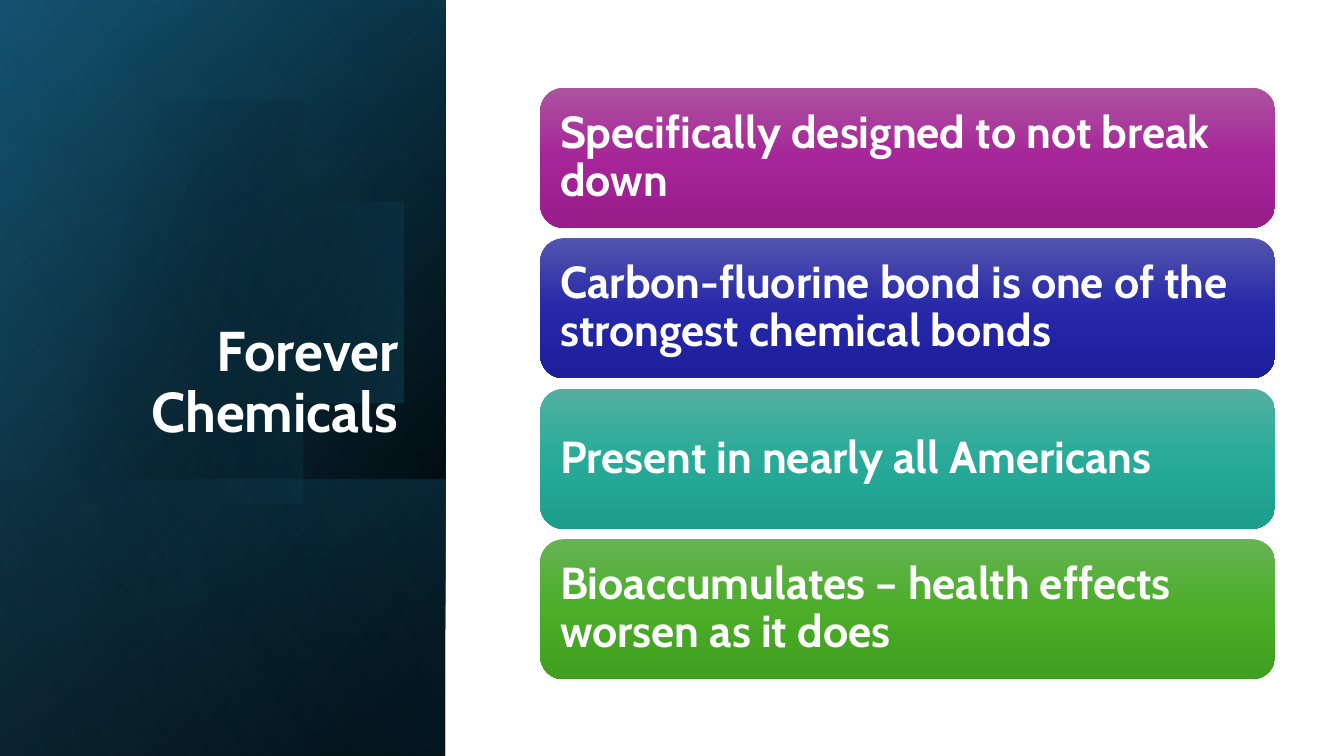
from math import acos, cos, pi, sin

from lxml.etree import SubElement
from pptx import Presentation
from pptx.dml.color import RGBColor
from pptx.enum.shapes import MSO_SHAPE
from pptx.enum.text import MSO_ANCHOR, MSO_AUTO_SIZE, PP_ALIGN
from pptx.oxml.ns import qn
from pptx.util import Inches, Pt

WIDTH, HEIGHT = Inches(13.33), Inches(7.5)
PANEL_COLS = 33.15
LOWER_ROW = 63.47

COLORS = {
    "white": "FFFFFF",
    "black": "000000",
    "navy": "104862",
    "teal": "156082",
    "sky": "46B1E1",
}

# Panel layers: top row, gradient stops (position, colour, opacity), angle
BACKDROP = [
    (0, [(8, "black", 100), (100, "navy", 100)], 50),
    (0, [(0, "black", 0), (99, "teal", 46)], 30),
    (LOWER_ROW, [(2, "teal", 29), (100, "black", 30)], 130),
]
DISC = [(29, "black", 0), (100, "teal", 43)]
SHEEN = (0, [(0, "black", 0), (99, "sky", 11)], 120)

FACTS = [
    ("Specifically designed to not break down", ("AC53A0", "A62598", "991C8B")),
    ("Carbon-fluorine bond is one of the strongest chemical bonds",
     ("5354AE", "2628A8", "1D1E9B")),
    ("Present in nearly all Americans", ("53B0A1", "27AB98", "1D9D8B")),
    ("Bioaccumulates – health effects worsen as it does",
     ("66B354", "4BAD28", "409F1E")),
]


def cols(count):
    """Length of a number of columns, 100 to the slide width."""
    return round(WIDTH * count / 100)


def rows(count):
    """Length of a number of rows, 100 to the slide height."""
    return round(HEIGHT * count / 100)


def apply_format(target, **values):
    for name, value in values.items():
        setattr(target, name, value)


def paint(shape, stops, angle):
    """Fill with a gradient running clockwise from left to right, no outline."""
    shape.shadow.inherit = False
    shape.line.fill.background()
    shape.fill.gradient()
    shape.fill.gradient_angle = 360 - angle
    stop_list = shape._element.spPr.find(qn("a:gradFill")).find(qn("a:gsLst"))
    for default_stop in list(stop_list):
        stop_list.remove(default_stop)
    for position, color, opacity in stops:
        stop = SubElement(stop_list, qn("a:gs"), pos=str(position * 1000))
        tint = SubElement(stop, qn("a:srgbClr"), val=COLORS.get(color, color))
        if opacity < 100:
            SubElement(tint, qn("a:alpha"), val=str(opacity * 1000))


def add_panel_layer(slide, top_row, stops, angle):
    """Add a mirrored quarter-turned rectangle from top_row to the slide's foot."""
    across, down = cols(PANEL_COLS), rows(100 - top_row)
    middle = rows(top_row) + down // 2
    layer = slide.shapes.add_shape(
        MSO_SHAPE.RECTANGLE, (across - down) // 2, middle - across // 2, down, across)
    layer.rotation = 90
    layer._element.spPr.find(qn("a:xfrm")).set("flipH", "1")
    paint(layer, stops, angle)


def add_disc(slide):
    """Add the circle that the left edge of the panel cuts off."""
    center_x, center_y, radius, cut = 1.44, 3.38, 2.28, -0.15
    reach = pi - acos((center_x - cut) / radius)
    steps = 120
    angles = [reach * (2 * step / steps - 1) for step in range(steps + 1)]
    rim = [(center_x + radius * cos(a), center_y + radius * sin(a)) for a in angles]
    builder = slide.shapes.build_freeform(*rim[0], scale=Inches(1))
    builder.add_line_segments(rim[1:], close=True)
    paint(builder.convert_to_shape(), DISC, 14)


def write(frame, text, size, align, frame_format):
    apply_format(frame, word_wrap=True, auto_size=MSO_AUTO_SIZE.NONE, **frame_format)
    frame.text = text
    paragraph = frame.paragraphs[0]
    apply_format(paragraph, alignment=align, line_spacing=0.9)
    font = paragraph.runs[0].font
    apply_format(font, name="Cabin", size=Pt(size), bold=True)
    font.color.rgb = RGBColor.from_string(COLORS["white"])


def add_title(slide, text):
    title = slide.shapes.title
    apply_format(title, left=cols(4.8), top=rows(24.53),
                 width=cols(25.58), height=rows(34.93))
    write(title.text_frame, text, 40, PP_ALIGN.RIGHT,
          {"vertical_anchor": MSO_ANCHOR.BOTTOM})
    # Bring the title in front of the panel
    slide.shapes._spTree.append(title._element)


def add_fact(slide, index, text, shades):
    card = slide.shapes.add_shape(
        MSO_SHAPE.ROUNDED_RECTANGLE, cols(40.2), rows(11.6 + 19.91 * index),
        cols(54.68), rows(18.53))
    paint(card, [(pos, shade, 100) for pos, shade in zip((0, 50, 100), shades)], 90)
    sides = ("left", "top", "right", "bottom")
    frame_format = {f"margin_{side}": Inches(0.13) for side in sides}
    frame_format["vertical_anchor"] = MSO_ANCHOR.MIDDLE
    write(card.text_frame, text, 32, PP_ALIGN.LEFT, frame_format)


def main():
    deck = Presentation()
    apply_format(deck, slide_width=WIDTH, slide_height=HEIGHT)
    slide = deck.slides.add_slide(deck.slide_layouts.get_by_name("Title Only"))
    for layer in BACKDROP:
        add_panel_layer(slide, *layer)
    add_disc(slide)
    add_panel_layer(slide, *SHEEN)
    add_title(slide, "Forever Chemicals")
    for index, (text, shades) in enumerate(FACTS):
        add_fact(slide, index, text, shades)
    deck.save("out.pptx")


if __name__ == "__main__":
    main()
